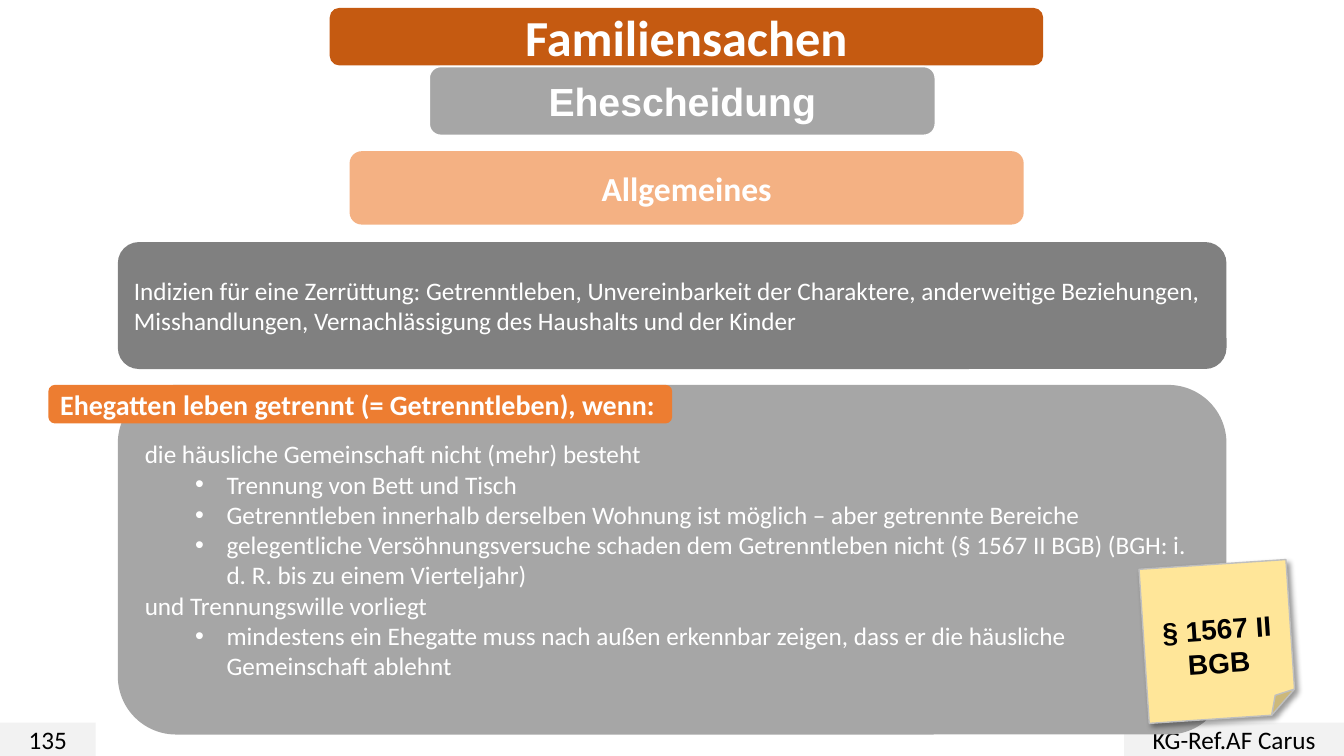
from lxml.etree import SubElement
from pptx import Presentation
from pptx.dml.color import RGBColor
from pptx.enum.shapes import MSO_SHAPE
from pptx.enum.text import MSO_ANCHOR, PP_ALIGN
from pptx.oxml.ns import qn
from pptx.util import Cm, Pt

WHITE, BLACK = "FFFFFF", "000000"
GRAY = "A6A6A6"
WIDTH, HEIGHT = 33.87, 19.05

TERMS = [
    (0, "die häusliche Gemeinschaft nicht (mehr) besteht"),
    (1, "Trennung von Bett und Tisch"),
    (1, "Getrenntleben innerhalb derselben Wohnung ist möglich – aber getrennte Bereiche"),
    (1, "gelegentliche Versöhnungsversuche schaden dem Getrenntleben nicht "
        "(§ 1567 II BGB) (BGH: i. d. R. bis zu einem Vierteljahr)"),
    (0, "und Trennungswille vorliegt"),
    (1, "mindestens ein Ehegatte muss nach außen erkennbar zeigen, "
        "dass er die häusliche Gemeinschaft ablehnt"),
]


def paint(target, color):
    """Give a fill or font a solid hex colour."""
    if hasattr(target, "solid"):
        target.solid()
        target.fore_color.rgb = RGBColor.from_string(color)
    else:
        target.color.rgb = RGBColor.from_string(color)


def panel(slide, box, fill, kind=MSO_SHAPE.ROUNDED_RECTANGLE, line=None):
    """Add a flat filled shape with middle-anchored text."""
    shape = slide.shapes.add_shape(kind, *map(Cm, box))
    shape.shadow.inherit = False
    paint(shape.fill, fill)
    if line:
        paint(shape.line.fill, line)
        shape.line.width = Pt(1)
    else:
        shape.line.fill.background()
    shape.text_frame.word_wrap = True
    shape.text_frame.vertical_anchor = MSO_ANCHOR.MIDDLE
    return shape


def write(para, text, size, bold=False, color=WHITE, face="Calibri", align=PP_ALIGN.CENTER):
    """Fill a paragraph and set its font."""
    para.text = text
    para.alignment = align
    font = para.font
    font.name, font.size, font.bold = face, Pt(size), bold
    paint(font, color)


def label(slide, box, text, fill, size, line=None, **style):
    """Add a rounded panel with one paragraph."""
    shape = panel(slide, box, fill, line=line)
    write(shape.text_frame.paragraphs[0], text, size, **style)


def heads(slide, left, top):
    """Stack the three headings."""
    label(slide, (left, top, 17.98, 1.45), "Familiensachen", "C55A11", 36, bold=True)
    label(slide, (left + 2.51, top + 1.48, 12.75, 1.73), "Ehescheidung", GRAY, 28,
          line=WHITE, bold=True, face="Arial")
    label(slide, (left + 0.5, top + 3.61, 16.99, 1.85), "Allgemeines", "F4B183", 24, bold=True)


def footer(slide, top, height):
    """Place the page number and course name at the slide's corners."""
    for left, width, text in ((0, 2.41, "135"), (WIDTH - 5.54, 5.54, "KG-Ref.AF Carus")):
        shape = panel(slide, (left, top, width, height), "F2F2F2", MSO_SHAPE.RECTANGLE)
        write(shape.text_frame.paragraphs[0], text, 18, color=BLACK)


def bullet(para):
    """Give a paragraph a hanging bullet."""
    props = para._p.get_or_add_pPr()
    props.set("marL", str(Cm(2.06)))
    props.set("indent", str(Cm(-0.79)))
    SubElement(props, qn("a:buFont"), typeface="Arial")
    SubElement(props, qn("a:buChar"), char="•")


def terms(slide, left, top, width, height):
    """Add the list of conditions with its overlapping heading."""
    frame = panel(slide, (left, top, width, height), GRAY).text_frame
    for row, (level, text) in enumerate(TERMS):
        para = frame.add_paragraph() if row else frame.paragraphs[0]
        write(para, text, 18, align=PP_ALIGN.LEFT)
        para.level = level
        if level:
            bullet(para)
    label(slide, (left - 1.75, top, 15.72, 0.97),
          "Ehegatten leben getrennt (= Getrenntleben), wenn:", "ED7D31", 20,
          bold=True, align=PP_ALIGN.LEFT)


def shade(shape):
    """Cast a soft shadow to the lower right."""
    effects = shape._element.spPr.find(qn("a:effectLst"))
    outer = SubElement(effects, qn("a:outerShdw"), blurRad=str(Pt(4)), dist=str(Pt(3)),
                       dir="2700000", algn="tl", rotWithShape="0")
    color = SubElement(outer, qn("a:srgbClr"), val=BLACK)
    SubElement(color, qn("a:alpha"), val="40000")


def note(slide, box):
    """Add the tilted sticky note."""
    shape = panel(slide, box, "FFE699", MSO_SHAPE.FOLDED_CORNER, "BFBFBF")
    shape.rotation = 356.2
    shade(shape)
    shape.text_frame.margin_top = Cm(0.95)
    write(shape.text_frame.paragraphs[0], "§ 1567 II BGB", 20, True, BLACK, "Arial")


def main():
    """Build and save the slide."""
    deck = Presentation()
    deck.slide_width, deck.slide_height = Cm(WIDTH), Cm(HEIGHT)
    slide = deck.slides.add_slide(deck.slide_layouts[6])
    heads(slide, 8.31, 0.2)
    footer(slide, HEIGHT - 0.84, 0.84)
    label(slide, (2.97, 6.1, 27.94, 3.2),
          "Indizien für eine Zerrüttung: Getrenntleben, Unvereinbarkeit der Charaktere, "
          "anderweitige Beziehungen, Misshandlungen, Vernachlässigung des Haushalts "
          "und der Kinder", "808080", 18, align=PP_ALIGN.LEFT)
    terms(slide, 2.97, 9.7, 27.94, 8.81)
    note(slide, (28.83, 14.22, 3.71, 3.89))
    deck.save("out.pptx")


if __name__ == "__main__":
    main()
